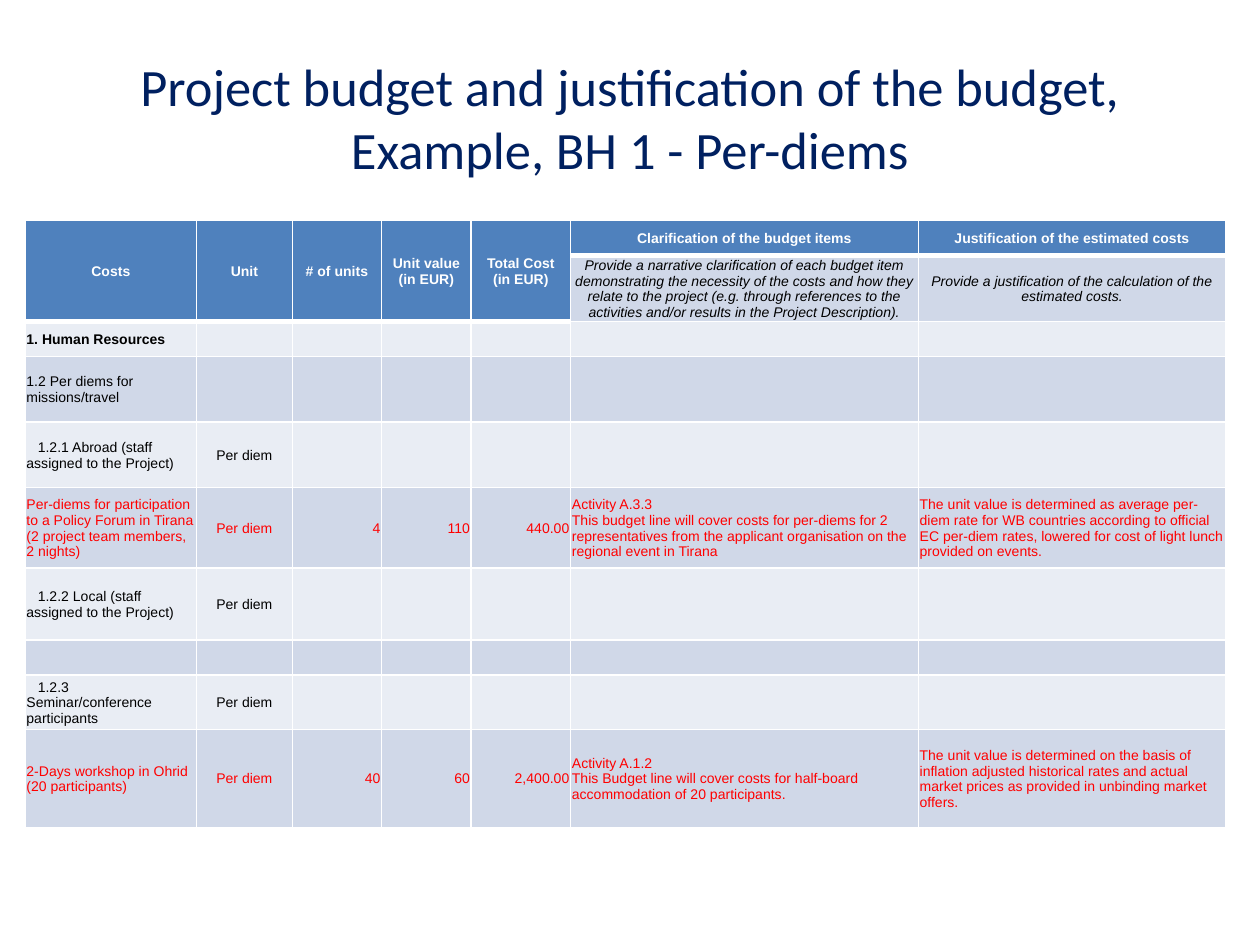
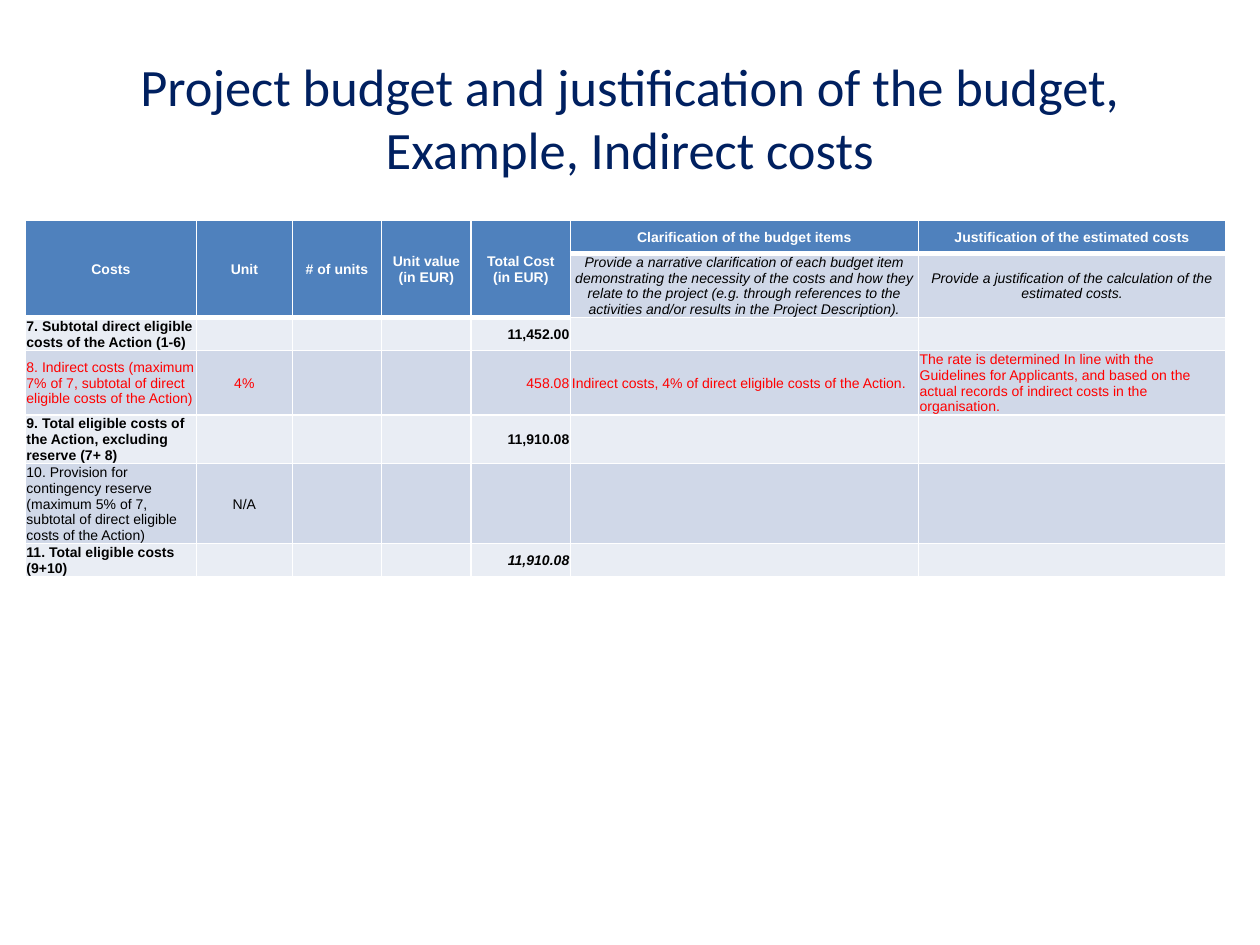
from dataclasses import dataclass

import lxml.etree
import pptx
import pptx.dml.color
import pptx.enum.text
import pptx.oxml.ns
import pptx.util

Inches = pptx.util.Inches
Pt = pptx.util.Pt
RGBColor = pptx.dml.color.RGBColor
ALIGN = pptx.enum.text.PP_ALIGN
MIDDLE = pptx.enum.text.MSO_ANCHOR.MIDDLE
qn = pptx.oxml.ns.qn


@dataclass(frozen=True)
class Theme:
    title_font: str = "Calibri"
    table_font: str = "Arial"
    title_size: int = 30
    table_size: int = 8
    title: str = "002060"
    header: str = "4F81BD"
    band_dark: str = "D0D8E8"
    band_light: str = "E9EDF4"
    white: str = "FFFFFF"
    black: str = "000000"
    example: str = "FF0000"
    thin_border: int = 1
    header_border: int = 3


THEME = Theme()


@dataclass
class BudgetRow:
    height: float
    costs: str = ""
    unit: str = ""
    unit_count: str = ""
    unit_value: str = ""
    total: str = ""
    clarification: str = ""
    justification: str = ""
    color: str = THEME.black
    bold: bool = False
    italic_total: bool = False
    indent: float = 0

    def texts(self):
        return (self.costs, self.unit, self.unit_count, self.unit_value,
                self.total, self.clarification, self.justification)


COLUMN_WIDTHS = (1.36, 0.76, 0.71, 0.71, 0.79, 2.76, 2.44)
COLUMN_ALIGNMENTS = (ALIGN.LEFT, ALIGN.CENTER, ALIGN.RIGHT, ALIGN.RIGHT,
                     ALIGN.RIGHT, ALIGN.LEFT, ALIGN.LEFT)
TOTAL_COLUMN = 4
HEADINGS = ("Costs", "Unit", "# of units", "Unit value\n(in EUR)",
            "Total Cost\n(in EUR)", "Clarification of the budget items",
            "Justification of the estimated costs")
INSTRUCTIONS = {
    5: "Provide a narrative clarification of each budget item demonstrating "
       "the necessity of the costs and how they relate to the project (e.g. "
       "through references to the activities and/or results in the Project "
       "Description).",
    6: "Provide a justification of the calculation of the estimated costs.",
}
SUBITEM_INDENT = 0.09

PER_DIEM_ROWS = (
    BudgetRow(0.28, "1. Human Resources", bold=True),
    BudgetRow(0.52, "1.2 Per diems for missions/travel"),
    BudgetRow(0.52, "1.2.1 Abroad (staff assigned to the Project)", "Per diem",
              indent=SUBITEM_INDENT),
    BudgetRow(0.64, "Per-diems for participation to a Policy Forum in Tirana "
              "(2 project team members, 2 nights)",
              "Per diem", "4", "110", "440.00",
              "Activity A.3.3\nThis budget line will cover costs for per-diems "
              "for 2 representatives from the applicant organisation on the "
              "regional event in Tirana",
              "The unit value is determined as average per-diem rate for WB "
              "countries according to official EC per-diem rates, lowered for "
              "cost of light lunch provided on events.",
              color=THEME.example),
    BudgetRow(0.57, "1.2.2 Local (staff assigned to the Project)", "Per diem",
              indent=SUBITEM_INDENT),
    BudgetRow(0.28),
    BudgetRow(0.43, "1.2.3 Seminar/conference participants", "Per diem",
              indent=SUBITEM_INDENT),
    BudgetRow(0.78, "2-Days workshop in Ohrid (20 participants)",
              "Per diem", "40", "60", "2,400.00",
              "Activity A.1.2\nThis Budget line will cover costs for half-board "
              "accommodation of 20 participants.",
              "The unit value is determined on the basis of inflation adjusted "
              "historical rates and actual market prices as provided in "
              "unbinding market offers.",
              color=THEME.example),
)

INDIRECT_COST_ROWS = (
    BudgetRow(0.16, "7. Subtotal direct eligible costs of the Action (1-6)",
              total="11,452.00", bold=True),
    BudgetRow(0.22, "8. Indirect costs (maximum 7% of 7, subtotal of direct "
              "eligible costs of the Action)",
              "4%", total="458.08",
              clarification="Indirect costs, 4% of direct eligible costs of "
              "the Action.",
              justification="The rate is determined In line with the "
              "Guidelines for Applicants, and based on the actual records of "
              "indirect costs in the organisation.",
              color=THEME.example),
    BudgetRow(0.34, "9. Total eligible costs of the Action, excluding reserve "
              "(7+ 8)", total="11,910.08", bold=True),
    BudgetRow(0.34, "10. Provision for contingency reserve (maximum 5% of 7, "
              "subtotal of direct eligible costs of the Action)", "N/A"),
    BudgetRow(0.21, "11. Total eligible costs (9+10)", total="11,910.08",
              bold=True, italic_total=True),
)


def format_font(font, name, size, color):
    font.name = name
    font.size = Pt(size)
    font.color.rgb = RGBColor.from_string(color)


def add_title(slide, text):
    title = slide.shapes.title
    title.left, title.top = Inches(0.5), Inches(0.3)
    title.width, title.height = Inches(9), Inches(1.25)
    title.text_frame.text = text
    title.text_frame.vertical_anchor = MIDDLE
    paragraph = title.text_frame.paragraphs[0]
    paragraph.alignment = ALIGN.CENTER
    format_font(paragraph.runs[0].font, THEME.title_font, THEME.title_size,
                THEME.title)


def set_borders(cell, top, bottom):
    """Draw white cell borders; the sides are always thin."""
    properties = cell._tc.get_or_add_tcPr()
    widths = {"L": THEME.thin_border, "R": THEME.thin_border,
              "T": top, "B": bottom}
    for side, width in widths.items():
        line = lxml.etree.SubElement(properties, qn(f"a:ln{side}"),
                                     w=str(Pt(width)))
        fill = lxml.etree.SubElement(line, qn("a:solidFill"))
        lxml.etree.SubElement(fill, qn("a:srgbClr"), val=THEME.white)


def style_cell(cell, fill, top=THEME.thin_border, bottom=THEME.thin_border):
    set_borders(cell, top, bottom)
    cell.fill.solid()
    cell.fill.fore_color.rgb = RGBColor.from_string(fill)
    cell.vertical_anchor = MIDDLE
    cell.margin_left = cell.margin_right = cell.margin_top = Inches(0.01)
    cell.margin_bottom = 0


def write_cell(cell, text, alignment, color, bold=False, italic=False,
               indent=0):
    paragraph = cell.text_frame.paragraphs[0]
    if not text:
        # Keeps an empty cell from forcing a taller row.
        lxml.etree.SubElement(paragraph._p, qn("a:endParaRPr"),
                              sz=str(THEME.table_size * 100))
        return
    paragraph.text = text
    paragraph.alignment = alignment
    if indent:
        paragraph._p.get_or_add_pPr().set("indent", str(Inches(indent)))
    for run in paragraph.runs:
        format_font(run.font, THEME.table_font, THEME.table_size, color)
        run.font.bold = bold
        run.font.italic = italic


def add_header(table):
    """Fill two header rows, merging the columns that have no instruction."""
    for column, heading in enumerate(HEADINGS):
        upper, lower = table.cell(0, column), table.cell(1, column)
        style_cell(upper, THEME.header, bottom=THEME.header_border)
        write_cell(upper, heading, ALIGN.CENTER, THEME.white, bold=True)
        if column in INSTRUCTIONS:
            style_cell(lower, THEME.band_dark, top=THEME.header_border)
            write_cell(lower, INSTRUCTIONS[column], ALIGN.CENTER, THEME.black,
                       italic=True)
        else:
            style_cell(lower, THEME.header, bottom=THEME.header_border)
            write_cell(lower, "", ALIGN.CENTER, THEME.white)
            upper.merge(lower)


def add_budget_row(table, index, row):
    fill = THEME.band_dark if index % 2 else THEME.band_light
    for column, text in enumerate(row.texts()):
        cell = table.cell(index, column)
        below_header = index == 2 and column not in INSTRUCTIONS
        style_cell(cell, fill, top=THEME.header_border if below_header
                   else THEME.thin_border)
        write_cell(cell, text, COLUMN_ALIGNMENTS[column], row.color, row.bold,
                   italic=row.italic_total and column == TOTAL_COLUMN,
                   indent=row.indent if column == 0 else 0)


def add_budget_table(slide, header_heights, rows, height):
    heights = (*header_heights, *(row.height for row in rows))
    frame = slide.shapes.add_table(
        len(heights), len(COLUMN_WIDTHS), Inches(0.2), Inches(1.75),
        Inches(sum(COLUMN_WIDTHS)), Inches(height))
    table = frame.table
    for column, width in zip(table.columns, COLUMN_WIDTHS):
        column.width = Inches(width)
    for table_row, row_height in zip(table.rows, heights):
        table_row.height = Inches(row_height)
    frame.height = Inches(height)
    add_header(table)
    for index, row in enumerate(rows, start=2):
        add_budget_row(table, index, row)


def add_budget_slide(presentation, example, header_heights, rows, height):
    slide = presentation.slides.add_slide(presentation.slide_layouts[5])
    add_title(slide, "Project budget and justification of the budget, "
                     f"Example, {example}")
    add_budget_table(slide, header_heights, rows, height)


def main():
    presentation = pptx.Presentation()
    presentation.slide_width = Inches(10)
    presentation.slide_height = Inches(7.5)
    add_budget_slide(presentation, "BH 1 - Per-diems", (0.28, 0.52),
                     PER_DIEM_ROWS, 4.85)
    add_budget_slide(presentation, "Indirect costs", (0.26, 0.48),
                     INDIRECT_COST_ROWS, 2.97)
    presentation.save("out.pptx")


if __name__ == "__main__":
    main()
